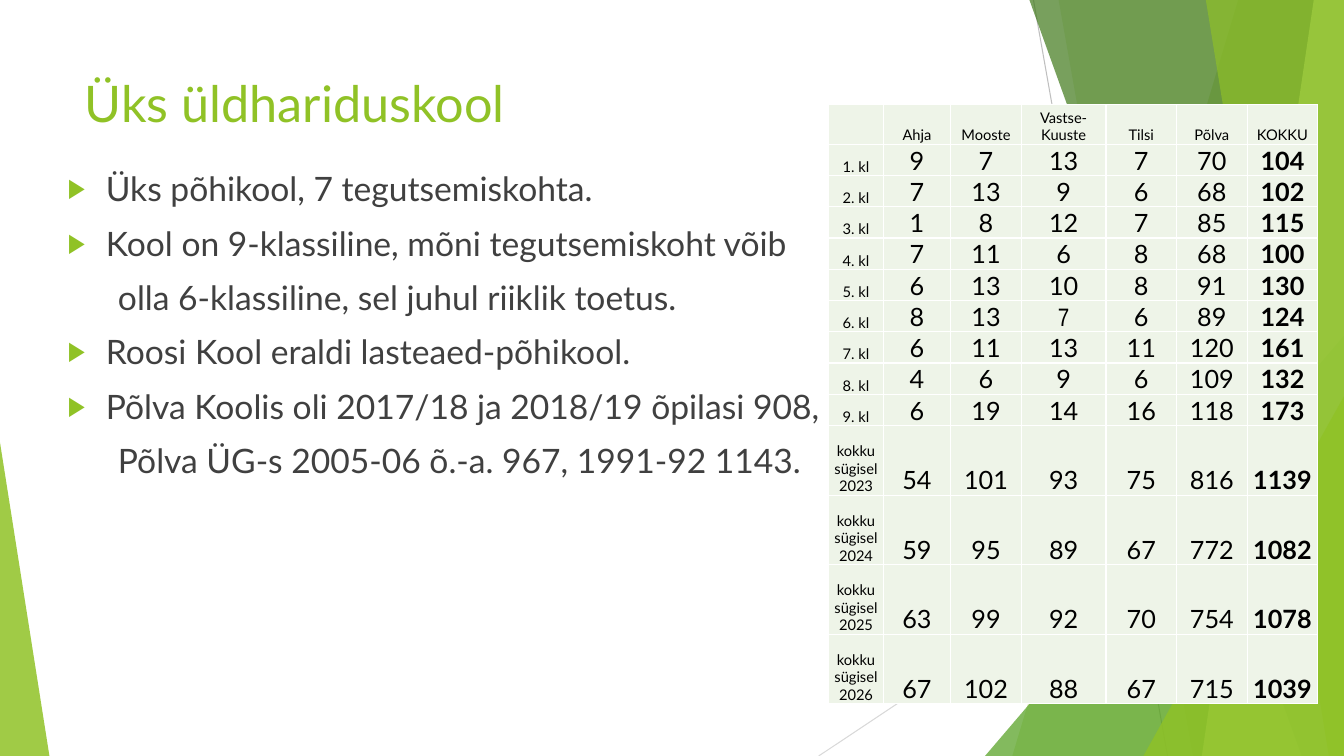
from lxml import etree
from pptx import Presentation
from pptx import util as u
from pptx.dml import color
from pptx.enum import shapes, text
from pptx.oxml import ns

COLOURS = {
    "title": "90C226", "body": "404040", "cell_text": "000000",
    "cell": "EEF4E8", "border": "FFFFFF",
    "line": "BFBFBF", "pale_line": "D9D9D9",
    "lime": "90C226", "green": "54A021", "forest": "3F7819", "light": "C0E474",
}
FONT = "Lato"
WIDTH, HEIGHT = 13.33, 7.5

LINES = [(10.25, 0, 11.58, 7.5, "line"), (13.33, 4.03, 8.12, 7.5, "pale_line")]
BANDS_BELOW = [(12.28, 10.04, "lime", 30), (10.5, 11.83, "lime", 20)]
BANDS_ABOVE = [(10.21, 12.91, "forest", 70), (13.03, 11.92, "light", 70),
               (11.96, 13.18, "lime", 65)]

BODY = [
    ("Üks põhikool, 7 tegutsemiskohta.", True),
    ("Kool on 9-klassiline, mõni tegutsemiskoht võib", True),
    ("olla 6-klassiline, sel juhul riiklik toetus.", False),
    ("Roosi Kool eraldi lasteaed-põhikool.", True),
    ("Põlva Koolis oli 2017/18 ja 2018/19 õpilasi 908,", True),
    ("Põlva ÜG-s 2005-06 õ.-a. 967, 1991-92 1143.", False),
]
HEADER = ["", "Ahja", "Mooste", "Vastse-Kuuste", "Tilsi", "Põlva", "KOKKU"]
CLASSES = [
    (9, 7, 13, 7, 70, 104), (7, 13, 9, 6, 68, 102), (1, 8, 12, 7, 85, 115),
    (7, 11, 6, 8, 68, 100), (6, 13, 10, 8, 91, 130), (8, 13, 7, 6, 89, 124),
    (6, 11, 13, 11, 120, 161), (4, 6, 9, 6, 109, 132), (6, 19, 14, 16, 118, 173),
]
TOTALS = {
    2023: (54, 101, 93, 75, 816, 1139), 2024: (59, 95, 89, 67, 772, 1082),
    2025: (63, 99, 92, 70, 754, 1078), 2026: (67, 102, 88, 67, 715, 1039),
}
COLUMN_WIDTHS = [0.54, 0.67, 0.7, 0.84, 0.7, 0.7, 0.7]
ROW_HEIGHTS = [0.39] + [0.31] * len(CLASSES) + [0.69] * len(TOTALS)
NARROW_CELL = (6, 3)


def rgb(name):
    return color.RGBColor.from_string(COLOURS[name])


def child(parent, tag, **attributes):
    return etree.SubElement(parent, ns.qn(tag), attributes)


def add_run(paragraph, words, size, colour, bold=False, font=FONT):
    run = paragraph.add_run()
    run.text = words
    run.font.name = font
    run.font.size = u.Pt(size)
    run.font.bold = bold
    run.font.color.rgb = rgb(colour)


def paint(shape, colour, opacity):
    shape.shadow.inherit = False
    shape.line.fill.background()
    shape.fill.solid()
    shape.fill.fore_color.rgb = rgb(colour)
    for value in shape.element.spPr.iter(ns.qn("a:srgbClr")):
        child(value, "a:alpha", val=str(opacity * 1000))


def add_line(parts, start_x, start_y, end_x, end_y, colour):
    line = parts.add_connector(
        shapes.MSO_CONNECTOR.STRAIGHT, u.Inches(start_x), u.Inches(start_y),
        u.Inches(end_x), u.Inches(end_y))
    line.line.color.rgb = rgb(colour)
    line.line.width = u.Pt(0.75)
    child(line.element.spPr, "a:effectLst")


def add_band(parts, top_x, bottom_x, colour, opacity, right, bottom):
    builder = parts.build_freeform(u.Inches(top_x), 0)
    corners = [(right, 0), (right, bottom), (bottom_x, bottom)]
    builder.add_line_segments([(u.Inches(x), u.Inches(y)) for x, y in corners])
    paint(builder.convert_to_shape(), colour, opacity)


def add_triangle(parts, left, top, width, bottom, apex, colour, opacity):
    triangle = parts.add_shape(
        shapes.MSO_SHAPE.ISOSCELES_TRIANGLE, u.Inches(left), u.Inches(top),
        u.Inches(width), u.Inches(bottom - top))
    triangle.adjustments[0] = apex
    paint(triangle, colour, opacity)


def add_backdrop(slide, right, bottom):
    parts = slide.shapes.add_group_shape().shapes
    for line in LINES:
        add_line(parts, *line)
    for band in BANDS_BELOW:
        add_band(parts, *band, right, bottom)
    add_triangle(parts, 9.77, 3.33, right - 9.77, bottom, 1, "green", 72)
    for band in BANDS_ABOVE:
        add_band(parts, *band, right, bottom)
    add_triangle(parts, 11.34, 3.93, right - 11.34, bottom, 1, "lime", 80)
    add_triangle(parts, 0, 4.39, 0.49, bottom, 0, "lime", 85)


def place(placeholder, left, top, width, height):
    placeholder.left, placeholder.top = u.Inches(left), u.Inches(top)
    placeholder.width, placeholder.height = u.Inches(width), u.Inches(height)
    placeholder.element.getparent().append(placeholder.element)
    frame = placeholder.text_frame
    frame.word_wrap = True
    frame.auto_size = text.MSO_AUTO_SIZE.NONE
    frame.vertical_anchor = text.MSO_ANCHOR.TOP
    return frame


def add_title(slide, *box):
    paragraph = place(slide.shapes.title, *box).paragraphs[0]
    paragraph.alignment = text.PP_ALIGN.LEFT
    add_run(paragraph, "Üks üldhariduskool", 36, "title")


def add_body(slide, *box):
    frame = place(slide.placeholders[1], *box)
    for index, (words, bulleted) in enumerate(BODY):
        paragraph = frame.add_paragraph() if index else frame.paragraphs[0]
        paragraph.space_before = u.Pt(10)
        add_run(paragraph, words, 24, "body")
        margin, indent = (0.38, -0.38) if bulleted else (0.5, 0)
        properties = paragraph._p.get_or_add_pPr()
        properties.set("marL", str(u.Inches(margin)))
        properties.set("indent", str(u.Inches(indent)))
        if bulleted:
            bullet_colour = child(properties, "a:buClr")
            child(bullet_colour, "a:srgbClr", val=COLOURS["lime"])
            child(properties, "a:buSzPct", val="80000")
            child(properties, "a:buChar", char="▶")
        else:
            child(properties, "a:buNone")


def format_cell(cell):
    cell.margin_left = cell.margin_right = cell.margin_top = u.Inches(0.01)
    cell.margin_bottom = 0
    cell.vertical_anchor = text.MSO_ANCHOR.BOTTOM
    cell.fill.solid()
    cell.fill.fore_color.rgb = rgb("cell")
    properties = cell._tc.get_or_add_tcPr()
    for index, side in enumerate("LRTB"):
        border = etree.Element(ns.qn("a:ln" + side), w=str(u.Pt(1)))
        fill = child(border, "a:solidFill")
        child(fill, "a:srgbClr", val=COLOURS["border"])
        properties.insert(index, border)


def add_pupil_table(slide, left, top):
    rows = [HEADER]
    rows += [(f"{number}. kl", *counts) for number, counts in enumerate(CLASSES, 1)]
    rows += [(f"kokku sügisel {year}", *counts) for year, counts in TOTALS.items()]
    table = slide.shapes.add_table(
        len(rows), len(HEADER), u.Inches(left), u.Inches(top),
        u.Inches(sum(COLUMN_WIDTHS)), u.Inches(sum(ROW_HEIGHTS))).table
    table.first_row = table.horz_banding = False
    for column, width in zip(table.columns, COLUMN_WIDTHS):
        column.width = u.Inches(width)
    for row, height in zip(table.rows, ROW_HEIGHTS):
        row.height = u.Inches(height)
    for row_index, values in enumerate(rows):
        for column_index, value in enumerate(values):
            cell = table.cell(row_index, column_index)
            format_cell(cell)
            if value == "":
                continue
            paragraph = cell.text_frame.paragraphs[0]
            paragraph.alignment = text.PP_ALIGN.CENTER
            is_count = row_index > 0 and column_index > 0
            is_narrow = (row_index, column_index) == NARROW_CELL
            add_run(paragraph, str(value), 18 if is_count else 10.5, "cell_text",
                    is_count and column_index == len(HEADER) - 1,
                    "Arial Narrow" if is_narrow else FONT)


def main():
    presentation = Presentation()
    presentation.slide_width = u.Inches(WIDTH)
    presentation.slide_height = u.Inches(HEIGHT)
    slide = presentation.slides.add_slide(presentation.slide_layouts[1])
    add_backdrop(slide, WIDTH, HEIGHT)
    add_title(slide, 0.74, 0.67, 9.4, 1.44)
    add_body(slide, 0.57, 1.62, 9.75, 4.62)
    add_pupil_table(slide, 8.22, 1.04)
    presentation.save("out.pptx")


if __name__ == "__main__":
    main()
